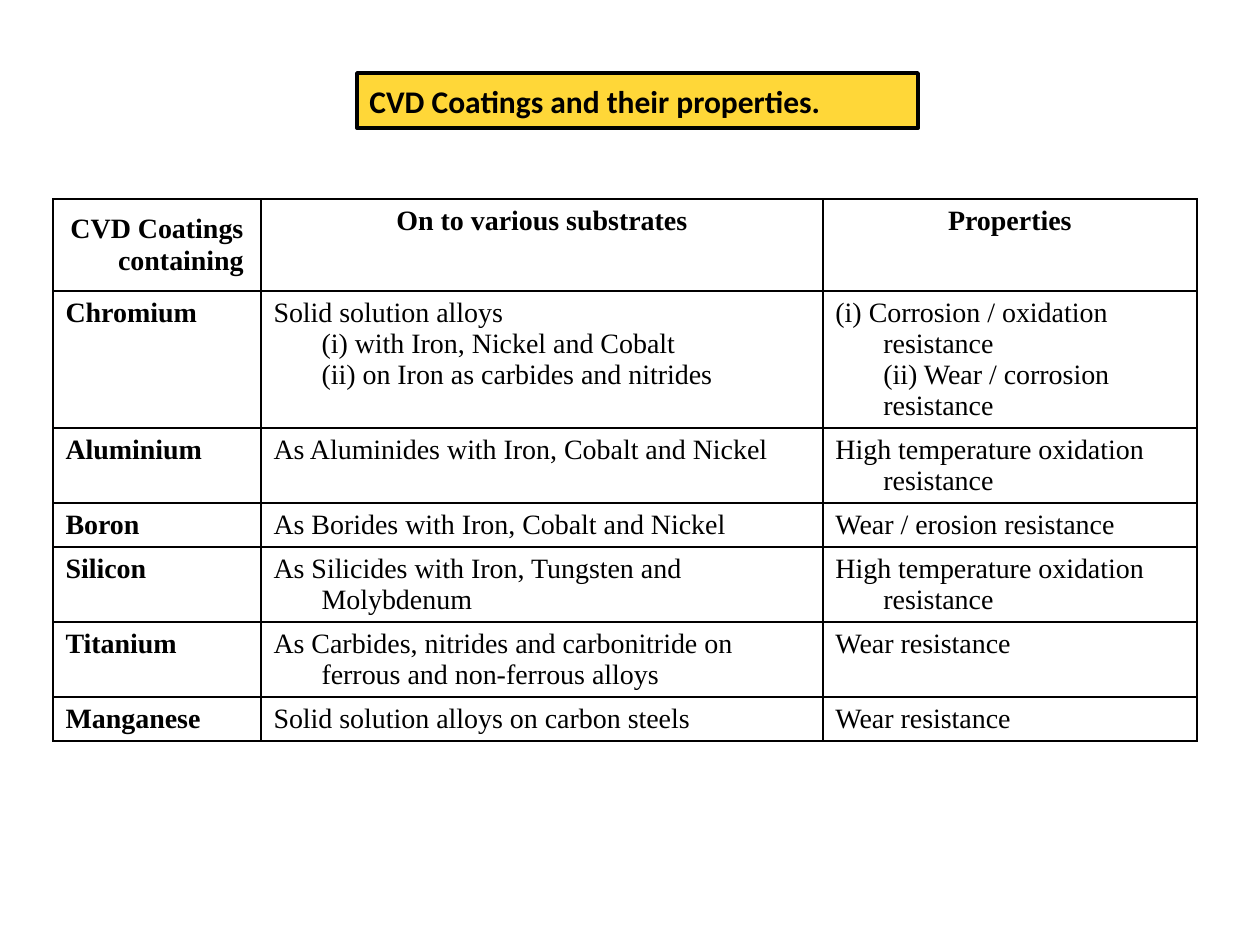
"""Build a slide with a table of CVD coatings and their properties."""
from dataclasses import dataclass

import pptx
import pptx.dml.color
import pptx.enum.shapes
import pptx.enum.text
import pptx.oxml
import pptx.oxml.ns
import pptx.util
from lxml import etree

PX = 914400 // 126
COLORS = {"ink": "000000", "border": "010000", "title": "FFCC00"}
TITLE_ALPHA = 78
BODY_FONT, TITLE_FONT = "Times New Roman", "Calibri"
COL_WIDTHS = [208, 562, 374]
INDENT = 48
ALIGN = pptx.enum.text.PP_ALIGN
ANCHOR = pptx.enum.text.MSO_ANCHOR


@dataclass
class Row:
    height: int
    texts: tuple[str, str, str]


HEADER = Row(92, ("CVD Coatings containing", "On to various substrates", "Properties"))
COATINGS = [
    Row(137, ("Chromium",
              "Solid solution alloys\n(i) with Iron, Nickel and Cobalt\n"
              "(ii) on Iron as carbides and nitrides",
              "(i) Corrosion / oxidation resistance\n(ii) Wear / corrosion resistance")),
    Row(75, ("Aluminium", "As Aluminides with Iron, Cobalt and Nickel",
             "High temperature oxidation resistance")),
    Row(44, ("Boron", "As Borides with Iron, Cobalt and Nickel",
             "Wear / erosion resistance")),
    Row(75, ("Silicon", "As Silicides with Iron, Tungsten and Molybdenum",
             "High temperature oxidation resistance")),
    Row(75, ("Titanium",
             "As Carbides, nitrides and carbonitride on ferrous and non-ferrous alloys",
             "Wear resistance")),
    Row(44, ("Manganese", "Solid solution alloys on carbon steels", "Wear resistance")),
]


def px(n: int) -> pptx.util.Emu:
    """Turn pixels into EMU."""
    return pptx.util.Emu(n * PX)


def rgb(name: str) -> pptx.dml.color.RGBColor:
    """Look up a named colour."""
    return pptx.dml.color.RGBColor.from_string(COLORS[name])


def add_text(p, text: str, font: str, size: int, bold: bool) -> None:
    """Add one run per line, with line breaks between them."""
    for i, line in enumerate(text.split("\n")):
        if i:
            p.add_line_break()
        r = p.add_run()
        r.text = line
        r.font.name, r.font.size, r.font.bold = font, pptx.util.Pt(size), bold
        r.font.color.rgb = rgb("ink")


def set_borders(cell) -> None:
    """Give all four sides of a cell a thin line."""
    tc_pr = cell._tc.get_or_add_tcPr()
    ns = pptx.oxml.ns.nsdecls("a")
    for i, side in enumerate(("lnL", "lnR", "lnT", "lnB")):
        tc_pr.insert(i, pptx.oxml.parse_xml(
            f'<a:{side} {ns} w="12700"><a:solidFill><a:srgbClr val="{COLORS["border"]}"/>'
            f'</a:solidFill></a:{side}>'))


def fill_cell(cell, text: str, align: ALIGN, bold: bool) -> None:
    """Style a cell and write its text with a hanging indent."""
    cell.fill.background()
    set_borders(cell)
    p = cell.text_frame.paragraphs[0]
    p.alignment = align
    p_pr = p._p.get_or_add_pPr()
    p_pr.set("marL", str(px(INDENT)))
    p_pr.set("indent", str(-px(INDENT)))
    add_text(p, text, BODY_FONT, 16, bold)


def add_coatings_table(s, left: int, top: int) -> None:
    """Draw the header and one row per coating."""
    rows = [HEADER, *COATINGS]
    table = s.shapes.add_table(
        len(rows), len(COL_WIDTHS), px(left), px(top),
        px(sum(COL_WIDTHS)), px(sum(row.height for row in rows))).table
    table.first_row = table.horz_banding = False
    for col, width in zip(table.columns, COL_WIDTHS):
        col.width = px(width)
    for i, row in enumerate(rows):
        table.rows[i].height = px(row.height)
        for j, text in enumerate(row.texts):
            is_header = row is HEADER
            align = ALIGN.CENTER if is_header else ALIGN.LEFT if j else ALIGN.JUSTIFY
            fill_cell(table.cell(i, j), text, align, is_header or j == 0)
    table.cell(0, 0).vertical_anchor = ANCHOR.MIDDLE


def add_title(s, text: str, left: int, top: int, width: int, height: int) -> None:
    """Draw the framed title."""
    sp = s.shapes.add_shape(pptx.enum.shapes.MSO_SHAPE.RECTANGLE,
                            px(left), px(top), px(width), px(height))
    sp.shadow.inherit = False
    sp.fill.solid()
    sp.fill.fore_color.rgb = rgb("title")
    color = sp._element.spPr.find(".//" + pptx.oxml.ns.qn("a:srgbClr"))
    etree.SubElement(color, pptx.oxml.ns.qn("a:alpha"), val=str(TITLE_ALPHA * 1000))
    sp.line.color.rgb = rgb("ink")
    sp.line.width = pptx.util.Pt(2.25)
    tf = sp.text_frame
    tf.word_wrap = True
    tf.vertical_anchor = ANCHOR.MIDDLE
    p = tf.paragraphs[0]
    p.alignment = ALIGN.LEFT
    add_text(p, text, TITLE_FONT, 18, True)


def main() -> None:
    """Build and save the slide."""
    prs = pptx.Presentation()
    prs.slide_width, prs.slide_height = px(1260), px(945)
    s = prs.slides.add_slide(prs.slide_layouts[6])
    add_coatings_table(s, 53, 199)
    add_title(s, "CVD Coatings and their properties.", 357, 73, 561, 55)
    prs.save("out.pptx")


if __name__ == "__main__":
    main()
